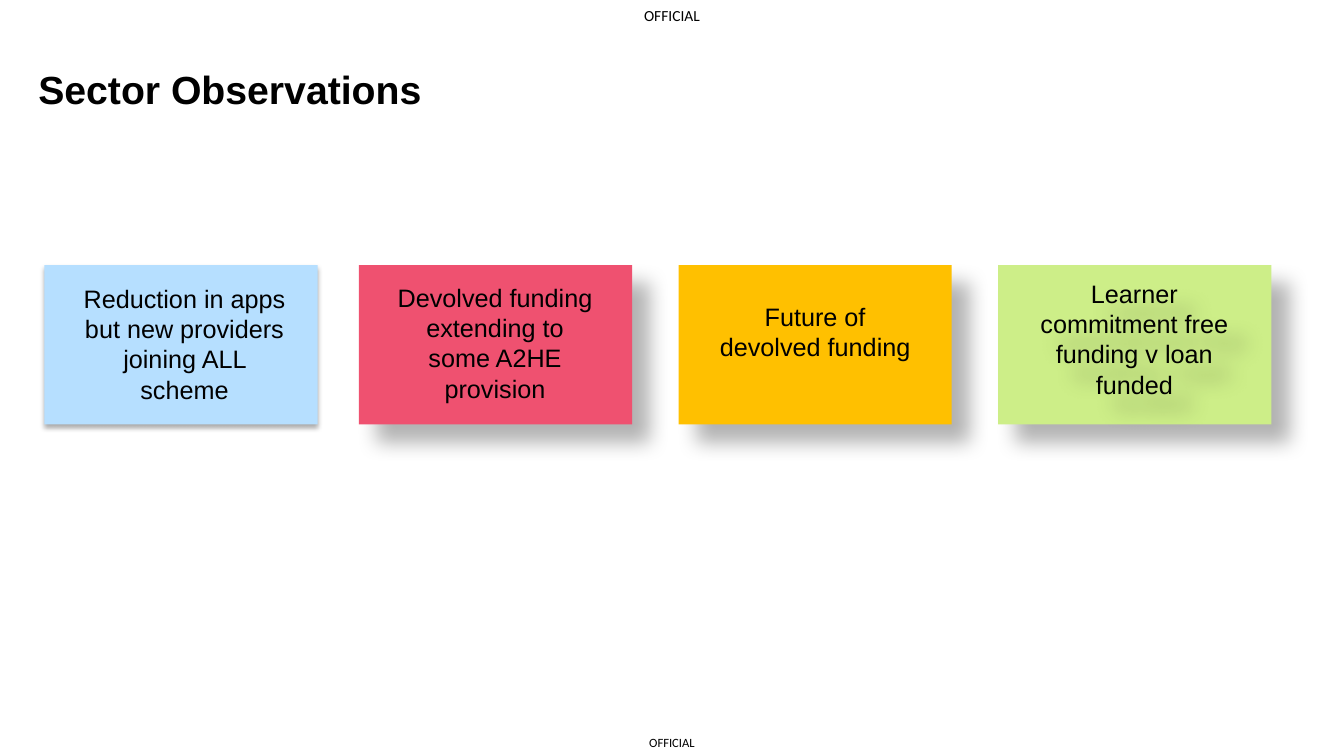
import pptx
import pptx.util
import pptx.dml.color
import pptx.enum.shapes
import pptx.enum.text
import pptx.oxml
import pptx.oxml.ns

Inches = pptx.util.Inches
Anchor = pptx.enum.text.MSO_ANCHOR
Align = pptx.enum.text.PP_ALIGN

THEME = {
    "black": "000000", "blue": "B6DFFF", "pink": "EF5170",
    "amber": "FFC000", "green": "CDEE88",
    "heading": 28, "body": 18, "header": 11, "footer": 9,
    "font": "Arial", "marking_font": "Calibri",
}
# Shadow: opacity %, blur pt, distance pt, angle in degrees
SOFT_SHADOW = (32, 3.5, 2.2, 90)
DEEP_SHADOW = (30, 15, 18, 45)


def write_text(shape, text, size, font_name, frame_format, alignment, bold=False):
    frame = shape.text_frame
    for name, value in frame_format.items():
        setattr(frame, name, value)
    paragraph = frame.paragraphs[0]
    paragraph.text = text
    paragraph.alignment = alignment
    font_format = {"size": pptx.util.Pt(size), "name": font_name, "bold": bold}
    for name, value in font_format.items():
        setattr(paragraph.font, name, value)
    paragraph.font.color.rgb = pptx.dml.color.RGBColor.from_string(THEME["black"])
    return paragraph


def add_shadow(shape, shadow):
    opacity, blur, distance, angle = shadow
    shape._element.spPr.append(pptx.oxml.parse_xml(
        f'<a:effectLst {pptx.oxml.ns.nsdecls("a")}>'
        f'<a:outerShdw blurRad="{pptx.util.Pt(blur)}" dist="{pptx.util.Pt(distance)}" '
        f'dir="{angle * 60000}" algn="tl" rotWithShape="0">'
        f'<a:srgbClr val="{THEME["black"]}"><a:alpha val="{opacity * 1000}"/></a:srgbClr>'
        '</a:outerShdw></a:effectLst>'))


presentation = pptx.Presentation()
presentation.slide_width = Inches(13.33)
presentation.slide_height = Inches(7.5)
slide = presentation.slides.add_slide(presentation.slide_layouts[5])

# Title
title = slide.shapes.title
title_format = {"left": 0.28, "top": 0.57, "width": 11.97, "height": 1.26}
for name, value in title_format.items():
    setattr(title, name, Inches(value))
heading = write_text(
    title, "Sector Observations", THEME["heading"], THEME["font"],
    {"vertical_anchor": Anchor.TOP, "margin_top": Inches(0.13), "word_wrap": True,
     "auto_size": pptx.enum.text.MSO_AUTO_SIZE.NONE},
    Align.LEFT, bold=True)
heading.line_spacing = 0.9

# Protective markings at the top and bottom edges
marking_format = {"vertical_anchor": Anchor.MIDDLE, "word_wrap": False}
for side in ("left", "right", "top", "bottom"):
    marking_format["margin_" + side] = 0
for left, top, width, height, size in (
    (6.23, 0, 0.87, 0.31, THEME["header"]),
    (6.3, 7.23, 0.73, 0.27, THEME["footer"]),
):
    marking = slide.shapes.add_textbox(
        Inches(left), Inches(top), Inches(width), Inches(height))
    write_text(marking, "OFFICIAL", size, THEME["marking_font"],
               marking_format, Align.CENTER)

# Observation cards: colour, card left, text box place, text, card and text shadows
cards = (
    ("blue", 0.44, (0.73, 2.76, 2.2, 1.31),
     "Reduction in apps but new providers joining ALL scheme", SOFT_SHADOW, None),
    ("pink", 3.56, (3.83, 2.75, 2.16, 1.31),
     "Devolved funding extending to some A2HE provision", DEEP_SHADOW, None),
    ("amber", 6.73, (6.98, 2.94, 2.21, 0.71),
     "Future of devolved funding", DEEP_SHADOW, None),
    ("green", 9.9, (10.14, 2.71, 2.22, 1.31),
     "Learner commitment free funding v loan funded", DEEP_SHADOW, DEEP_SHADOW),
)
for colour, left, text_place, text, card_shadow, text_shadow in cards:
    card = slide.shapes.add_shape(
        pptx.enum.shapes.MSO_SHAPE.RECTANGLE,
        Inches(left), Inches(2.63), Inches(2.71), Inches(1.58))
    card.fill.solid()
    card.fill.fore_color.rgb = pptx.dml.color.RGBColor.from_string(THEME[colour])
    card.line.fill.background()
    add_shadow(card, card_shadow)

    label = slide.shapes.add_textbox(*map(Inches, text_place))
    write_text(label, text, THEME["body"], THEME["font"],
               {"word_wrap": True, "vertical_anchor": Anchor.TOP}, Align.CENTER)
    if text_shadow:
        add_shadow(label, text_shadow)

presentation.save("out.pptx")
